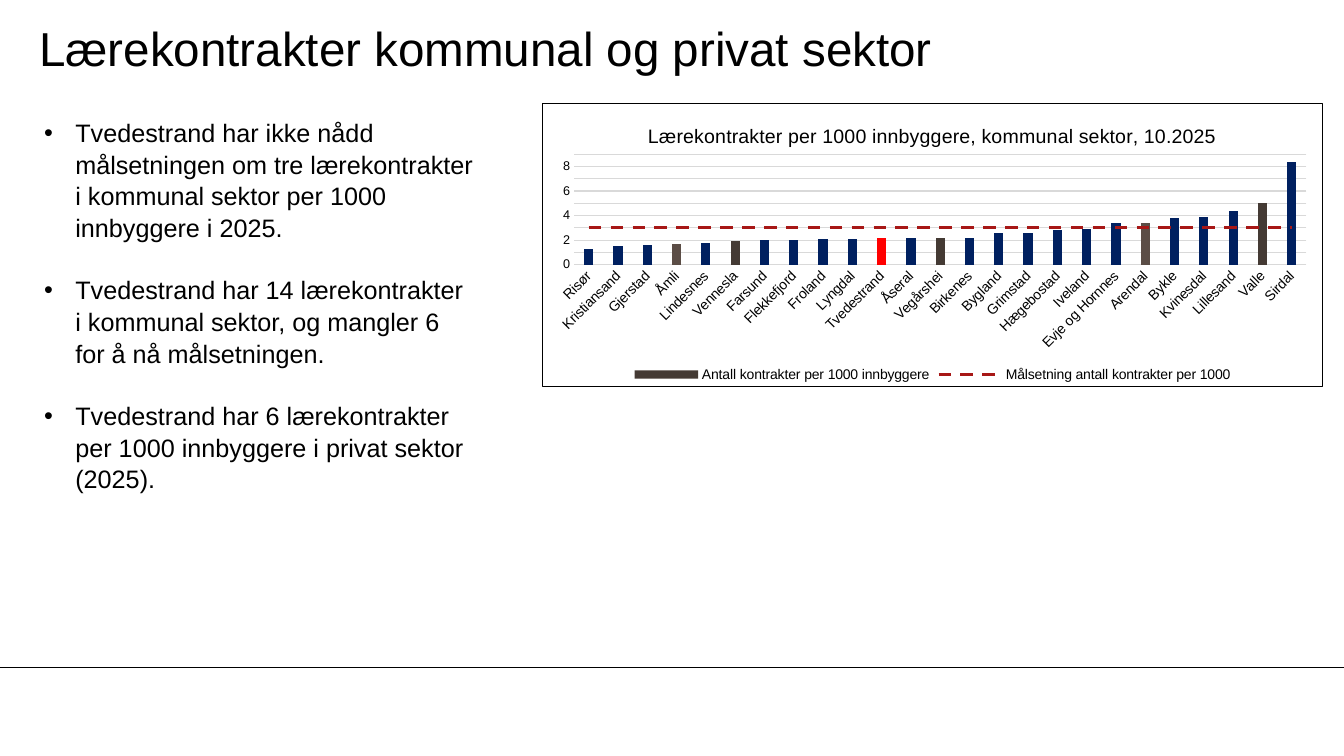
from typing import NamedTuple

from lxml import etree
from pptx import Presentation
from pptx.chart.data import CategoryChartData
from pptx.dml.color import RGBColor
from pptx.enum.chart import XL_CHART_TYPE, XL_LEGEND_POSITION, XL_MARKER_STYLE, XL_TICK_MARK
from pptx.enum.dml import MSO_LINE
from pptx.enum.shapes import MSO_CONNECTOR
from pptx.enum.text import MSO_ANCHOR, MSO_AUTO_SIZE, PP_ALIGN
from pptx.oxml import parse_xml
from pptx.oxml.ns import nsdecls, qn
from pptx.util import Cm, Pt

BLACK, GREY, NAVY, RED = "000000", "D9D9D9", "002060", "FF0000"
BROWN, LIGHT_BROWN, TARGET_RED = "443A34", "5B4D46", "A71716"
TARGET = 3


class Municipality(NamedTuple):
    name: str
    contracts: float
    color: str = NAVY


MUNICIPALITIES = [
    Municipality("Risør", 1.3),
    Municipality("Kristiansand", 1.5),
    Municipality("Gjerstad", 1.6),
    Municipality("Åmli", 1.7, LIGHT_BROWN),
    Municipality("Lindesnes", 1.8),
    Municipality("Vennesla", 1.9, BROWN),
    Municipality("Farsund", 2),
    Municipality("Flekkefjord", 2),
    Municipality("Froland", 2.1),
    Municipality("Lyngdal", 2.1),
    Municipality("Tvedestrand", 2.2, RED),
    Municipality("Åseral", 2.2),
    Municipality("Vegårshei", 2.2, BROWN),
    Municipality("Birkenes", 2.2),
    Municipality("Bygland", 2.6),
    Municipality("Grimstad", 2.6),
    Municipality("Hægebostad", 2.8),
    Municipality("Iveland", 2.9),
    Municipality("Evje og Hornnes", 3.4),
    Municipality("Arendal", 3.4, LIGHT_BROWN),
    Municipality("Bykle", 3.8),
    Municipality("Kvinesdal", 3.9),
    Municipality("Lillesand", 4.4),
    Municipality("Valle", 5, BROWN),
    Municipality("Sirdal", 8.4),
]

POINTS = [
    "Tvedestrand har ikke nådd målsetningen om tre lærekontrakter i kommunal sektor per 1000 innbyggere i 2025.",
    "Tvedestrand har 14 lærekontrakter i kommunal sektor, og mangler 6 for å nå målsetningen.",
    "Tvedestrand har 6 lærekontrakter per 1000 innbyggere i privat sektor (2025).",
]


def set_attrs(obj, values: dict) -> None:
    for name, value in values.items():
        setattr(obj, name, value)


def paint(fill, color: str) -> None:
    fill.solid()
    fill.fore_color.rgb = RGBColor.from_string(color)


def style_font(font, size: float) -> None:
    set_attrs(font, {"name": "Arial", "size": Pt(size), "bold": False})
    paint(font.fill, BLACK)


def style_line(line, color: str, width: float = 0.75) -> None:
    paint(line.fill, color)
    line.width = Pt(width)


def remove_children(parent, tag: str) -> None:
    for child in parent.findall(qn(tag)):
        parent.remove(child)


def layout_xml(**values: float):
    """Manual chart layout; values are shares of the chart's size."""
    target = '<c:layoutTarget val="inner"/>' if "w" in values else ""
    modes = "".join(f'<c:{k}Mode val="edge"/>' for k in ("x", "y"))
    sizes = "".join(f'<c:{k} val="{v}"/>' for k, v in values.items())
    return parse_xml(f"<c:layout {nsdecls('c')}><c:manualLayout>{target}{modes}{sizes}"
                     "</c:manualLayout></c:layout>")


def add_title(s) -> None:
    sp = s.shapes.title
    set_attrs(sp, {"left": Cm(0.99), "top": Cm(0.25), "width": Cm(28.19), "height": Cm(1.9)})
    tf = sp.text_frame
    set_attrs(tf, {"margin_left": 0, "margin_right": 0, "margin_top": 0, "margin_bottom": 0,
                   "vertical_anchor": MSO_ANCHOR.MIDDLE, "auto_size": MSO_AUTO_SIZE.NONE})
    p = tf.paragraphs[0]
    p.text = "Lærekontrakter kommunal og privat sektor"
    p.alignment = PP_ALIGN.LEFT
    style_font(p.runs[0].font, 34)


def add_points(s) -> None:
    tf = s.shapes.add_textbox(Cm(0.86), Cm(2.79), Cm(11.33), Cm(11.79)).text_frame
    tf.word_wrap = True
    for i, text in enumerate(POINTS):
        p = tf.add_paragraph() if i else tf.paragraphs[0]
        p.line_spacing = 1.05
        if i:
            p.space_before = Pt(21.7)
        pPr = p._p.get_or_add_pPr()
        pPr.set("marL", str(Cm(0.79)))
        pPr.set("indent", str(-Cm(0.79)))
        etree.SubElement(pPr, qn("a:buFont")).set("typeface", "Arial")
        etree.SubElement(pPr, qn("a:buChar")).set("char", "•")
        r = p.add_run()
        r.text = text
        style_font(r.font, 18)


def move_target_to_line(chart) -> None:
    """Turn the second column series into a line on the same axes."""
    bars = chart.plots[0]._element
    ser = bars.findall(qn("c:ser"))[1]
    remove_children(ser, "c:invertIfNegative")
    lines = parse_xml(f'<c:lineChart {nsdecls("c")}><c:grouping val="standard"/>'
                      '<c:varyColors val="0"/><c:marker val="1"/></c:lineChart>')
    lines.insert(2, ser)
    for axis in bars.findall(qn("c:axId")):
        etree.SubElement(lines, qn("c:axId")).set("val", axis.get("val"))
    bars.addnext(lines)


def style_axes(chart) -> None:
    cat, val = chart.category_axis, chart.value_axis
    for axis, size in ((cat, 10), (val, 9)):
        set_attrs(axis, {"major_tick_mark": XL_TICK_MARK.NONE, "minor_tick_mark": XL_TICK_MARK.NONE})
        style_font(axis.tick_labels.font, size)
    style_line(cat.format.line, GREY)
    cat._element.find(qn("c:txPr")).find(qn("a:bodyPr")).set("rot", "-2700000")
    set_attrs(val, {"minimum_scale": 0, "maximum_scale": 9, "major_unit": 1})
    set_attrs(val.tick_labels, {"number_format": "0", "number_format_is_linked": False})
    val.format.line.fill.background()
    style_line(val.major_gridlines.format.line, GREY)


def style_series(chart) -> None:
    columns, lines = chart.plots
    set_attrs(columns, {"gap_width": 219, "overlap": -27, "vary_by_categories": False})
    contracts, target = columns.series[0], lines.series[0]
    paint(contracts.format.fill, BROWN)
    for i, m in enumerate(MUNICIPALITIES):
        if m.color != BROWN:
            paint(contracts.points[i].format.fill, m.color)
    target.smooth = False
    target.marker.style = XL_MARKER_STYLE.NONE
    style_line(target.format.line, TARGET_RED, 2.25)
    target.format.line.dash_style = MSO_LINE.DASH


def add_contract_chart(s) -> None:
    data = CategoryChartData()
    data.categories = [m.name for m in MUNICIPALITIES]
    data.add_series("Antall kontrakter per 1000 innbyggere", [m.contracts for m in MUNICIPALITIES])
    data.add_series("Målsetning antall kontrakter per 1000", [TARGET] * len(MUNICIPALITIES))
    chart = s.shapes.add_chart(XL_CHART_TYPE.COLUMN_CLUSTERED, Cm(13.67), Cm(2.59),
                               Cm(19.66), Cm(7.16), data).chart
    style_font(chart.font, 10)
    move_target_to_line(chart)
    style_axes(chart)
    style_series(chart)

    title = chart.chart_title
    title.text_frame.text = "Lærekontrakter per 1000 innbyggere, kommunal sektor, 10.2025"
    style_font(title.text_frame.paragraphs[0].runs[0].font, 14)
    remove_children(title._element, "c:layout")
    title._element.find(qn("c:tx")).addnext(layout_xml(x=0.13, y=0.06))

    chart.has_legend = True
    set_attrs(chart.legend, {"position": XL_LEGEND_POSITION.BOTTOM, "include_in_layout": False})
    style_font(chart.legend.font, 10)

    chart_xml = chart._chartSpace.chart
    remove_children(chart_xml.plotArea, "c:layout")
    chart_xml.plotArea.insert(0, layout_xml(x=0.04, y=0.18, w=0.94, h=0.39))
    chart_xml.addnext(parse_xml(
        f'<c:spPr {nsdecls("c", "a")}><a:solidFill><a:srgbClr val="FFFFFF"/></a:solidFill>'
        f'<a:ln w="{Pt(0.75)}"><a:solidFill><a:srgbClr val="{BLACK}"/></a:solidFill></a:ln></c:spPr>'))


def add_footer_line(s, width: int) -> None:
    line = s.shapes.add_connector(MSO_CONNECTOR.STRAIGHT, 0, Cm(16.81), width, Cm(16.81))
    style_line(line.line, BLACK)
    etree.SubElement(line._element.spPr, qn("a:effectLst"))


def main() -> None:
    prs = Presentation()
    set_attrs(prs, {"slide_width": Cm(33.87), "slide_height": Cm(19.05)})
    s = prs.slides.add_slide(prs.slide_layouts[5])
    add_footer_line(s, prs.slide_width)
    add_title(s)
    add_points(s)
    add_contract_chart(s)
    prs.save("out.pptx")


if __name__ == "__main__":
    main()
